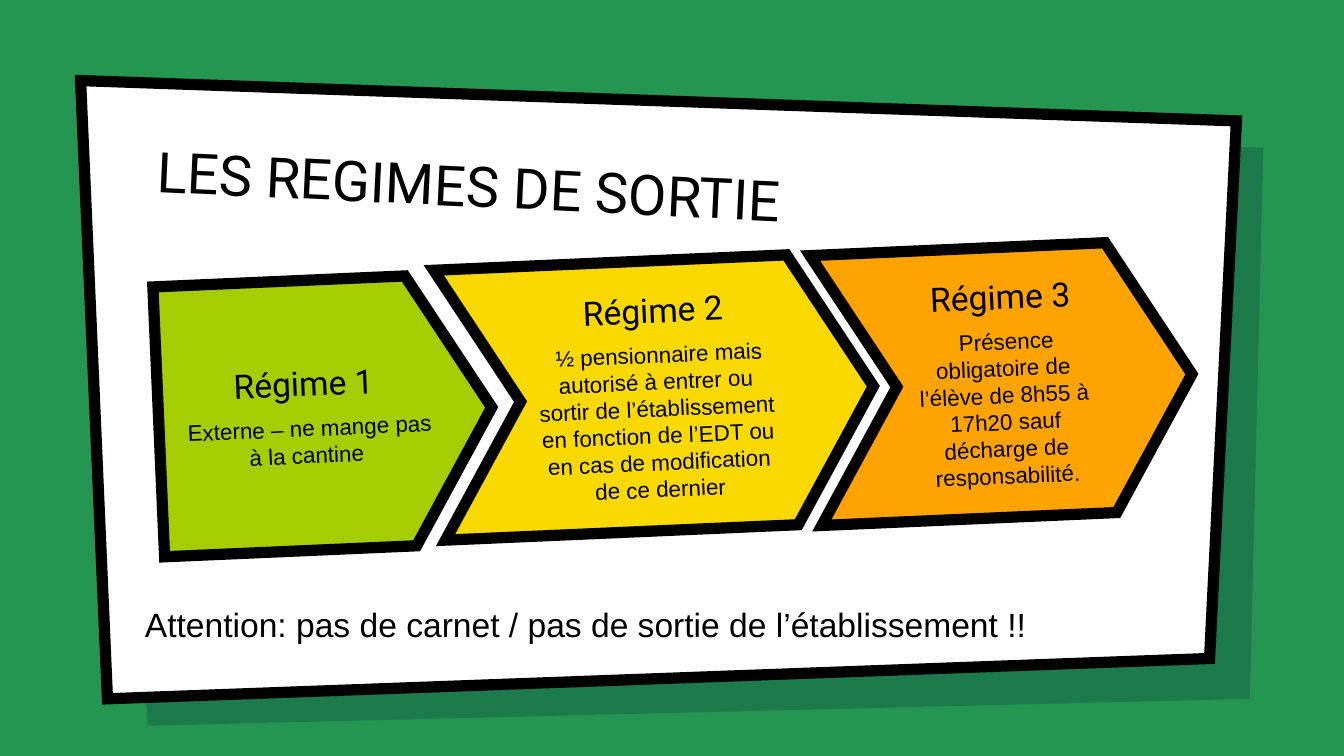
"""Build the slide on the three school exit regimes."""
from dataclasses import dataclass

from lxml import etree
from pptx import Presentation
from pptx.dml.color import RGBColor
from pptx.enum.shapes import MSO_SHAPE
from pptx.enum.text import MSO_ANCHOR, PP_ALIGN
from pptx.oxml.ns import qn
from pptx.util import Inches, Pt

GREEN = RGBColor(0x24, 0x96, 0x51)
NAVY = RGBColor(0x00, 0x19, 0x36)
WHITE = RGBColor(0xFF, 0xFF, 0xFF)
BLACK = RGBColor(0x00, 0x00, 0x00)
LIME = RGBColor(0xA6, 0xCD, 0x02)
YELLOW = RGBColor(0xFA, 0xD9, 0x00)
ORANGE = RGBColor(0xFF, 0xA3, 0x00)

PENTAGON, CHEVRON = MSO_SHAPE.PENTAGON, MSO_SHAPE.CHEVRON
TOP, MIDDLE, BOTTOM = MSO_ANCHOR.TOP, MSO_ANCHOR.MIDDLE, MSO_ANCHOR.BOTTOM
LEFT, CENTER = PP_ALIGN.LEFT, PP_ALIGN.CENTER

CELL = Inches(0.1)
COLUMNS, ROWS = 100, 56.25
CARD = ((5.5, 5.8), (91.7, 8.7), (90.5, 49.4), (8.1, 51.6))
CARD_SHADOW_OFFSET = 2.5
ARROW_HEIGHT = 20.1
ARROW_TILT = 357.5

TITLE_FONT = {"name": "Roboto", "size": Pt(30)}
HEADING_FONT = {"name": "Roboto", "size": Pt(18)}
BODY_FONT = {"name": "Arial", "size": Pt(12)}
WARNING_FONT = {"name": "Arial", "size": Pt(18)}


@dataclass(frozen=True)
class Place:
    """A box in grid columns and rows, with its rotation in degrees."""

    column: float
    row: float
    width: float
    height: float
    tilt: float = 0

    def lengths(self) -> list[int]:
        """Return left, top, width and height as slide lengths."""
        return [cells(n) for n in (self.column, self.row, self.width, self.height)]


@dataclass(frozen=True)
class Regime:
    """One arrow of the process."""

    heading: str
    body: str
    outline: MSO_SHAPE
    color: RGBColor
    place: Place


REGIMES = (
    Regime("Régime 1", "Externe – ne mange pas à la cantine", PENTAGON, LIME,
           Place(11.8, 20.8, 24.8, ARROW_HEIGHT, ARROW_TILT)),
    Regime("Régime 2", "½ pensionnaire mais autorisé à entrer ou sortir de "
           "l’établissement en fonction de l’EDT ou en cas de modification de ce dernier",
           CHEVRON, YELLOW, Place(32.7, 19.4, 32.3, ARROW_HEIGHT, ARROW_TILT)),
    Regime("Régime 3", "Présence obligatoire de l’élève de 8h55 à 17h20 sauf "
           "décharge de responsabilité.",
           CHEVRON, ORANGE, Place(60.7, 18.4, 28, ARROW_HEIGHT, ARROW_TILT)),
)


def cells(count: float) -> int:
    """Convert grid cells to a slide length."""
    return round(count * CELL)


def apply(target, values: dict) -> None:
    """Set each named attribute on the target."""
    for name, value in values.items():
        setattr(target, name, value)


def paint(shape, color: RGBColor) -> None:
    """Give a shape a flat fill and no shadow."""
    shape.shadow.inherit = False
    shape.fill.solid()
    shape.fill.fore_color.rgb = color


def outline(shape) -> None:
    """Draw a thick black border with sharp corners."""
    shape.line.color.rgb = BLACK
    shape.line.width = Pt(6)
    line = shape.line._get_or_add_ln()
    etree.SubElement(line, qn("a:miter"), lim="800000")


def prepare_frame(frame, anchor) -> None:
    """Set wrapping, anchor and equal insets on a text frame."""
    sides = ("left", "top", "right", "bottom")
    insets = {f"margin_{side}": Inches(0.1) for side in sides}
    apply(frame, {"word_wrap": True, "vertical_anchor": anchor, **insets})


def write(para, text: str, font: dict, alignment) -> None:
    """Write one black run in a paragraph."""
    para.alignment = alignment
    span = para.add_run()
    span.text = text
    apply(span.font, font)
    span.font.color.rgb = BLACK


def add_card(page, offset: float, color: RGBColor):
    """Draw the slanted card moved by an offset on both axes."""
    corners = [(column + offset, row + offset) for column, row in CARD]
    builder = page.shapes.build_freeform(*corners[0], scale=CELL)
    builder.add_line_segments(corners[1:], close=True)
    card = builder.convert_to_shape()
    paint(card, color)
    return card


def add_text(page, place: Place, text: str, font: dict, anchor) -> None:
    """Add a text box with a single line."""
    box = page.shapes.add_textbox(*place.lengths())
    box.rotation = place.tilt
    prepare_frame(box.text_frame, anchor)
    write(box.text_frame.paragraphs[0], text, font, LEFT)


def add_regime(page, regime: Regime) -> None:
    """Draw one arrow with its heading and body."""
    arrow = page.shapes.add_shape(regime.outline, *regime.place.lengths())
    arrow.rotation = regime.place.tilt
    arrow.adjustments[0] = 0.3
    paint(arrow, regime.color)
    outline(arrow)
    frame = arrow.text_frame
    prepare_frame(frame, MIDDLE)
    write(frame.paragraphs[0], regime.heading, HEADING_FONT, CENTER)
    body = frame.add_paragraph()
    body.space_before = Pt(6)
    write(body, regime.body, BODY_FONT, CENTER)
    body._p.get_or_add_pPr().set("indent", str(Inches(0.06)))


def main() -> None:
    """Build and save the deck."""
    deck = Presentation()
    apply(deck, {"slide_width": cells(COLUMNS), "slide_height": cells(ROWS)})
    page = deck.slides.add_slide(deck.slide_layouts[6])
    page.background.fill.solid()
    page.background.fill.fore_color.rgb = GREEN

    shade = add_card(page, CARD_SHADOW_OFFSET, NAVY)
    shade.line.fill.background()
    tint = shade._element.spPr.find(f"{qn('a:solidFill')}/{qn('a:srgbClr')}")
    etree.SubElement(tint, qn("a:alpha"), val="22000")
    outline(add_card(page, 0, WHITE))

    add_text(page, Place(10.7, 9.6, 76.9, 8.3, 2.7), "LES REGIMES DE SORTIE",
             TITLE_FONT, BOTTOM)
    for regime in REGIMES:
        add_regime(page, regime)
    add_text(page, Place(9.8, 43.9, 79.9, 9),
             "Attention: pas de carnet / pas de sortie de l’établissement !!",
             WARNING_FONT, TOP)
    deck.save("out.pptx")


if __name__ == "__main__":
    main()
